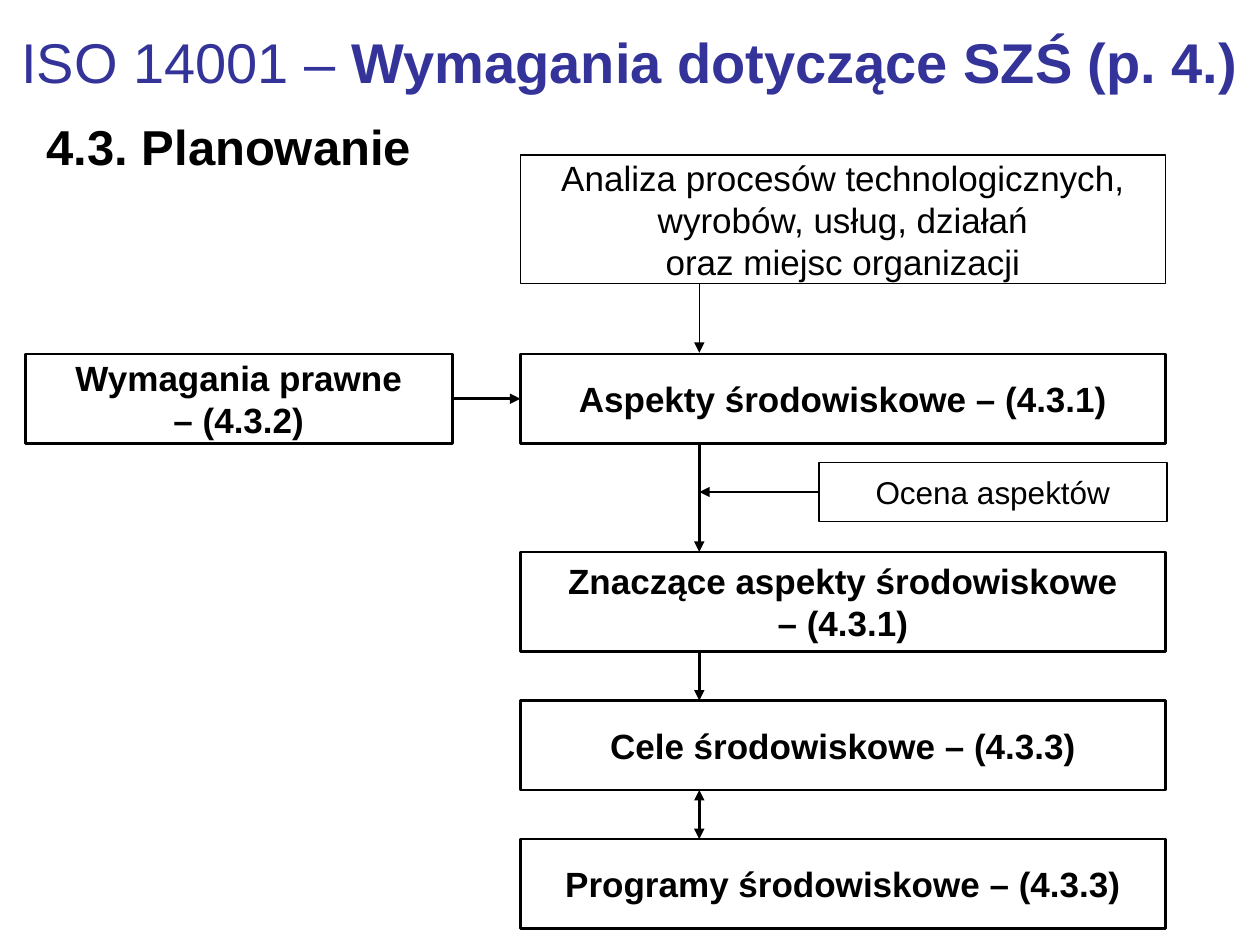
from lxml import etree
from pptx import Presentation
from pptx.dml.color import RGBColor
from pptx.enum import shapes, text
from pptx.oxml.ns import qn
from pptx.util import Inches, Pt

BLACK = RGBColor(0x00, 0x00, 0x00)
INDIGO = RGBColor(0x33, 0x33, 0x99)
FONT = "Arial"
TOP, LEFT, BOTTOM, RIGHT = range(4)

COLUMN_LEFT, COLUMN_WIDTH = 4.13, 5.12
FLOW_X = 5.55


def style(run, size, color, bold=False):
    run.font.name = FONT
    run.font.size = Pt(size)
    run.font.bold = bold
    run.font.color.rgb = color


def add_heading(slide, left, top, width, height):
    heading = slide.shapes.add_textbox(
        Inches(left), Inches(top), Inches(width), Inches(height))
    frame = heading.text_frame
    frame.word_wrap = True
    frame.vertical_anchor = text.MSO_ANCHOR.MIDDLE
    line = frame.paragraphs[0]
    line.alignment = text.PP_ALIGN.CENTER
    for words, bold in (("ISO 14001 –", False),
                        (" Wymagania dotyczące SZŚ (p. 4.)", True)):
        run = line.add_run()
        run.text = words
        style(run, 32, INDIGO, bold)


def add_section_title(slide, left, top, width, height):
    title = slide.shapes.title
    title.left, title.top = Inches(left), Inches(top)
    title.width, title.height = Inches(width), Inches(height)
    frame = title.text_frame
    frame.text = "4.3. Planowanie"
    frame.vertical_anchor = text.MSO_ANCHOR.MIDDLE
    frame.paragraphs[0].alignment = text.PP_ALIGN.LEFT
    style(frame.paragraphs[0].runs[0], 28, BLACK, True)


def add_step(slide, words, left, top, width, height, size=20, bold=True, weight=1.5):
    step = slide.shapes.add_shape(
        shapes.MSO_SHAPE.RECTANGLE,
        Inches(left), Inches(top), Inches(width), Inches(height))
    step.shadow.inherit = False
    step.fill.background()
    step.line.color.rgb = BLACK
    step.line.width = Pt(weight)
    frame = step.text_frame
    frame.word_wrap = False
    frame.vertical_anchor = text.MSO_ANCHOR.MIDDLE
    frame.text = words
    for line in frame.paragraphs:
        line.alignment = text.PP_ALIGN.CENTER
        style(line.runs[0], size, BLACK, bold)
    return step


def add_arrow(slide, start, end, weight=1.5, both_ways=False):
    arrow = slide.shapes.add_connector(
        shapes.MSO_CONNECTOR.STRAIGHT, *map(Inches, start + end))
    arrow.line.color.rgb = BLACK
    arrow.line.width = Pt(weight)
    outline = arrow.line._get_or_add_ln()
    for tip in ("a:headEnd", "a:tailEnd") if both_ways else ("a:tailEnd",):
        etree.SubElement(outline, qn(tip), type="triangle")
    etree.SubElement(arrow._element.spPr, qn("a:effectLst"))
    return arrow


def add_planning_flow(slide, left, width):
    add_step(slide, "Analiza procesów technologicznych,\nwyrobów, usług, działań\n"
             "oraz miejsc organizacji", left, 1.23, width, 1.02, bold=False, weight=1)
    aspects = add_step(slide, "Aspekty środowiskowe – (4.3.1)", left, 2.81, width, 0.71)
    add_step(slide, "Znaczące aspekty środowiskowe\n– (4.3.1)", left, 4.38, width, 0.79)
    add_step(slide, "Cele środowiskowe – (4.3.3)", left, 5.56, width, 0.71)
    add_step(slide, "Programy środowiskowe – (4.3.3)", left, 6.66, width, 0.71)

    for start, end, weight, both_ways in ((2.25, 2.8, 0.75, False),
                                          (3.52, 4.38, 1.5, False),
                                          (5.17, 5.56, 1.5, False),
                                          (6.27, 6.66, 1.5, True)):
        add_arrow(slide, (FLOW_X, start), (FLOW_X, end), weight, both_ways)
    return aspects


def add_legal_requirements(slide, aspects, left, top, width, height):
    requirements = add_step(slide, "Wymagania prawne\n– (4.3.2)", left, top, width, height)
    middle = top + height / 2
    arrow = add_arrow(slide, (left + width, middle), (COLUMN_LEFT, middle))
    arrow.begin_connect(requirements, RIGHT)
    arrow.end_connect(aspects, LEFT)


def add_assessment(slide, left, top, width, height):
    assessment = add_step(slide, "Ocena aspektów", left, top, width, height,
                          size=18, bold=False, weight=1)
    middle = top + height / 2
    arrow = add_arrow(slide, (left, middle), (FLOW_X, middle), weight=0.75)
    arrow.begin_connect(assessment, LEFT)


def main():
    deck = Presentation()
    deck.slide_width, deck.slide_height = Inches(10), Inches(7.5)
    slide = deck.slides.add_slide(deck.slide_layouts[5])
    add_heading(slide, 0, 0.13, 10, 0.71)
    add_section_title(slide, 0.27, 0.77, 3.7, 0.77)
    aspects = add_planning_flow(slide, COLUMN_LEFT, COLUMN_WIDTH)
    add_legal_requirements(slide, aspects, 0.2, 2.81, 3.39, 0.71)
    add_assessment(slide, 6.5, 3.67, 2.76, 0.47)
    deck.save("out.pptx")


if __name__ == "__main__":
    main()
